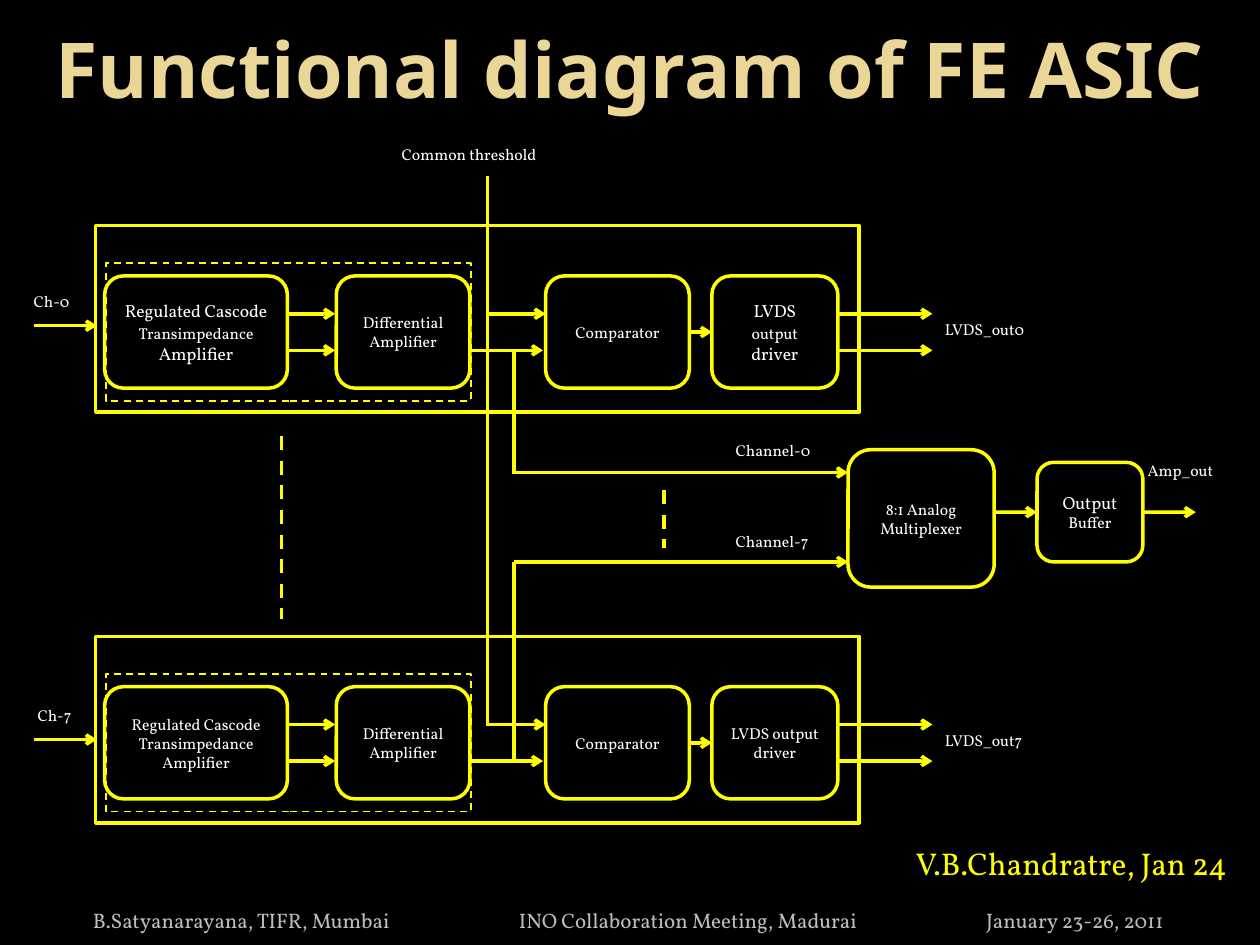
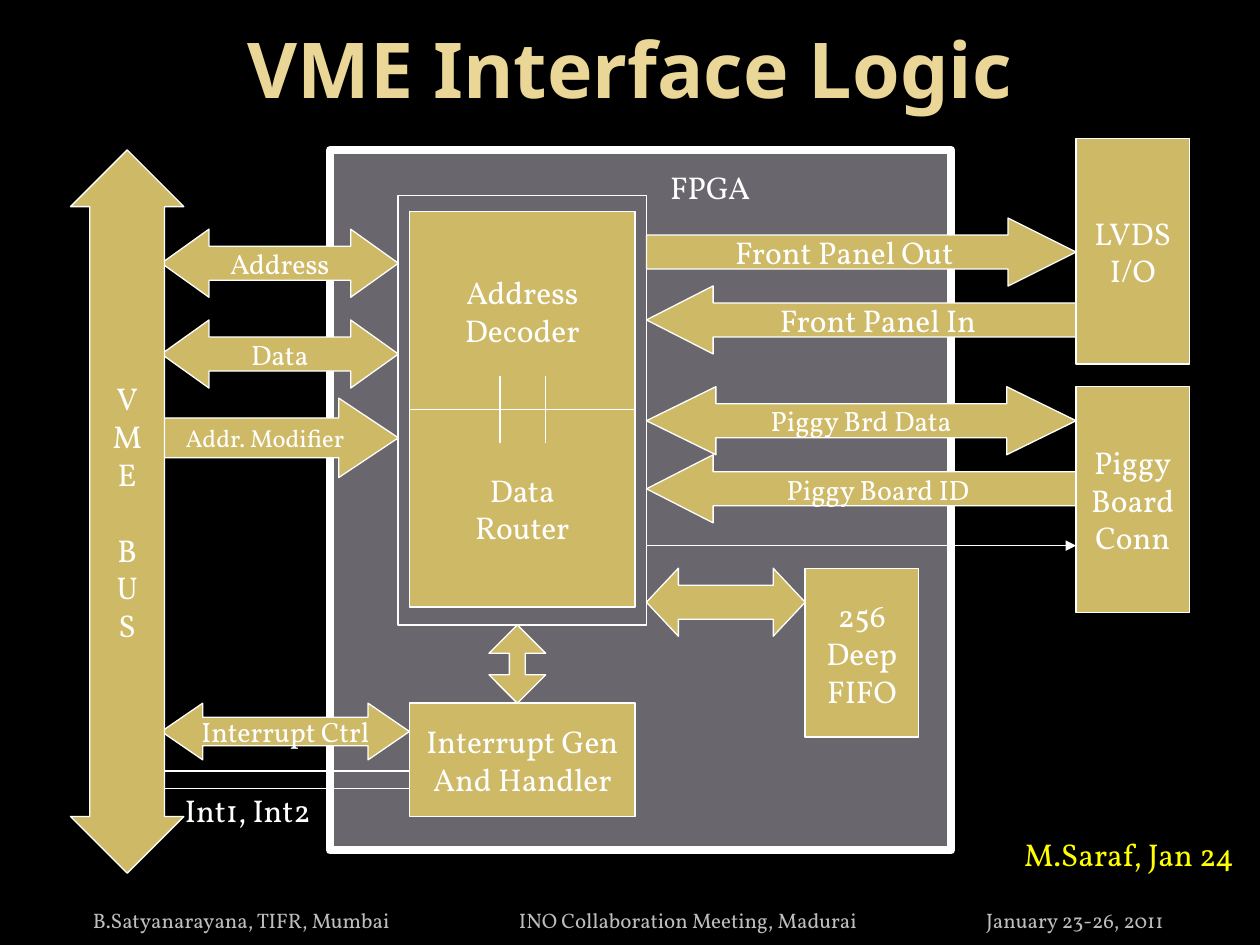
from dataclasses import dataclass
from itertools import cycle

from lxml import etree
from pptx import Presentation
from pptx.dml.color import RGBColor
from pptx.enum import dml, shapes, text
from pptx.oxml import ns
from pptx.util import Pt

COLORS = {
    "black": "000000", "title": "EAD696", "footer": "BDBDBD", "white": "FFFFFF",
    "yellow": "FFFF00", "gold": "CEB966", "gray": "69676D",
}
TITLE_FONT, BODY_FONT = "Noto Sans", "Vollkorn"
KIND = shapes.MSO_SHAPE
ALIGN = text.PP_ALIGN
ANCHOR = text.MSO_ANCHOR
RECT, ROUND = KIND.RECTANGLE, KIND.ROUNDED_RECTANGLE
BOTH, RIGHT, LEFT, UP_DOWN = (
    KIND.LEFT_RIGHT_ARROW, KIND.RIGHT_ARROW, KIND.LEFT_ARROW, KIND.UP_DOWN_ARROW)


@dataclass
class Style:
    line: str
    weight: float
    fill: str = ""
    dashed: bool = False
    wrap: bool = True


@dataclass
class Block:
    kind: int
    left: float
    top: float
    width: float
    height: float
    text: str = ""
    sizes: tuple = (9,)
    adjustments: tuple = ()


@dataclass
class Label:
    text: str
    left: float
    top: float
    width: float
    height: float = 19.4
    size: float = 9
    color: str = "white"
    font: str = BODY_FONT
    bold: bool = False
    align: int = ALIGN.LEFT
    anchor: int = ANCHOR.TOP
    inset: float = 7.2


@dataclass
class Line:
    x1: float
    y1: float
    x2: float
    y2: float
    head: str = ""


@dataclass
class Channel:
    number: int
    top: float
    cascode: tuple
    driver: tuple
    input_y: float
    label_left: float
    label_top: float


OUTLINE = Style("yellow", 2)
DASHED = Style("yellow", 2, dashed=True)
THIN_DASHED = Style("yellow", 1, dashed=True)
PANEL = Style("white", 4.5, "gray")
GOLD = Style("white", 0.75, "gold", wrap=False)
HAIRLINE = Style("white", 0.75)

CHANNELS = (
    Channel(0, 128.9, ("Regulated Cascode |Transimpedance| Amplifier", (10, 9, 10)),
            ("LVDS |output| driver", (10, 9, 10)), 186.1, 12.2, 163.4),
    Channel(7, 363.6, ("Regulated Cascode Transimpedance Amplifier", (9,)),
            ("LVDS output driver", (9,)), 422.6, 14.4, 399.6),
)


def rgb(name: str) -> RGBColor:
    return RGBColor.from_string(COLORS[name])


def format_runs(paragraph, sizes: tuple, color: str, font: str, bold: bool = False) -> None:
    for run, size in zip(paragraph.runs, cycle(sizes)):
        run.font.size = Pt(size)
        run.font.name = font
        run.font.bold = bold
        run.font.color.rgb = rgb(color)


def style_line(line, style: Style) -> None:
    line.color.rgb = rgb(style.line)
    line.width = Pt(style.weight)
    if style.dashed:
        line.dash_style = dml.MSO_LINE.DASH


def draw_block(slide, block: Block, style: Style):
    shape = slide.shapes.add_shape(
        block.kind, Pt(block.left), Pt(block.top), Pt(block.width), Pt(block.height))
    shape.shadow.inherit = False
    for index, value in enumerate(block.adjustments):
        shape.adjustments[index] = value
    if style.fill:
        shape.fill.solid()
        shape.fill.fore_color.rgb = rgb(style.fill)
    else:
        shape.fill.background()
    style_line(shape.line, style)
    if block.text:
        frame = shape.text_frame
        frame.word_wrap = style.wrap
        frame.vertical_anchor = ANCHOR.MIDDLE
        frame.text = block.text
        for paragraph in frame.paragraphs:
            first, *others = paragraph.text.split("|")
            paragraph.text = first
            for part in others:
                paragraph.add_run().text = part
            paragraph.alignment = ALIGN.CENTER
            format_runs(paragraph, block.sizes, "white", BODY_FONT)
    return shape


def draw_label(slide, label: Label) -> None:
    shape = slide.shapes.add_textbox(
        Pt(label.left), Pt(label.top), Pt(label.width), Pt(label.height))
    frame = shape.text_frame
    frame.word_wrap = True
    frame.vertical_anchor = label.anchor
    frame.margin_left = frame.margin_right = Pt(label.inset)
    frame.text = label.text
    paragraph = frame.paragraphs[0]
    paragraph.alignment = label.align
    format_runs(paragraph, (label.size,), label.color, label.font, label.bold)


def draw_line(slide, line: Line, style: Style, begin=None, end=None) -> None:
    connector = slide.shapes.add_connector(
        shapes.MSO_CONNECTOR.STRAIGHT, Pt(line.x1), Pt(line.y1), Pt(line.x2), Pt(line.y2))
    if begin is not None:
        connector.begin_connect(begin, 3)
    if end is not None:
        connector.end_connect(end, 1)
    style_line(connector.line, style)
    if line.head:
        outline = connector.line._get_or_add_ln()
        etree.SubElement(outline, ns.qn("a:tailEnd"), type=line.head)
    etree.SubElement(connector._element.spPr, ns.qn("a:effectLst"))


def new_slide(presentation, title: str, credit: Label):
    slide = presentation.slides.add_slide(presentation.slide_layouts[6])
    slide.background.fill.solid()
    slide.background.fill.fore_color.rgb = rgb("black")
    draw_label(slide, Label(title, 5.8, 3.6, 708.4, 70.6, 44, "title", TITLE_FONT,
                            True, ALIGN.CENTER, ANCHOR.MIDDLE))
    for words, left, width in (
        ("B.Satyanarayana, TIFR, Mumbai", 53, 190),
        ("INO Collaboration Meeting, Madurai", 296.5, 215),
        ("January 23-26, 2011", 563.5, 125),
    ):
        draw_label(slide, Label(words, left, 511.2, width, 25.2, 12, "footer",
                                anchor=ANCHOR.BOTTOM, inset=0))
    draw_label(slide, credit)
    return slide


def draw_channel(slide, channel: Channel) -> None:
    top = channel.top
    box_top, upper, lower = top + 28.8, top + 50.4, top + 71.3
    draw_block(slide, Block(RECT, 54.7, top, 436.3, 106.6), OUTLINE)
    draw_block(slide, Block(RECT, 60.5, top + 21.6, 208.8, 78.5), THIN_DASHED)
    stages = [
        draw_block(slide, Block(ROUND, left, box_top, width, 64.1, words, sizes), OUTLINE)
        for left, width, (words, sizes) in (
            (59.8, 104.4, channel.cascode),
            (192.2, 76.3, ("Differential Amplifier", (9,))),
            (311.8, 82.1, ("Comparator", (9,))),
            (406.8, 72, channel.driver),
        )
    ]
    for x1, x2, y in (
        (163.4, 191.5, upper), (163.4, 191.5, lower),
        (277.9, 311.8, upper), (267.8, 310.3, lower),
        (478.8, 532.8, upper), (478.8, 532.8, lower),
        (19.4, 55.4, channel.input_y),
    ):
        draw_line(slide, Line(x1, y, x2, y, "arrow"), OUTLINE)
    middle = box_top + 32
    draw_line(slide, Line(393.9, middle, 406.8, middle, "arrow"), OUTLINE,
              stages[2], stages[3])
    draw_label(slide, Label(f"LVDS_out{channel.number}", 532.8, upper, 69.1))
    draw_label(slide, Label(f"Ch-{channel.number}", channel.label_left,
                            channel.label_top, 38.9))


def build_functional_diagram(presentation) -> None:
    slide = new_slide(presentation, "Functional diagram of FE ASIC", Label(
        "V.B.Chandratre, Jan 24", 516.2, 478.8, 201.6, 28.8, 18, "yellow"))
    for channel in CHANNELS:
        draw_channel(slide, channel)
    multiplexer = Block(ROUND, 484.6, 257, 83.5, 78.5, "8:1 Analog Multiplexer")
    draw_block(slide, multiplexer, OUTLINE)
    output_buffer = draw_block(slide, Block(
        ROUND, 592.6, 264.2, 60.5, 56.9, "Output |Buffer", (10, 9)), OUTLINE)
    draw_line(slide, Line(568.1, 292.7, 592.6, 292.7, "arrow"), OUTLINE, end=output_buffer)
    draw_line(slide, Line(653.1, 292.7, 683.3, 292.7, "arrow"), OUTLINE, begin=output_buffer)
    for line in (
        Line(278.6, 414, 278.6, 100.8),
        Line(293.8, 200.2, 293.8, 270.7),
        Line(293.8, 270, 484.6, 270, "arrow"),
        Line(293.8, 321.1, 293.8, 434.9),
        Line(293.8, 321.1, 484.6, 321.1, "arrow"),
    ):
        draw_line(slide, line, OUTLINE)
    for line in (Line(161, 249.1, 161, 353.5), Line(379.4, 280.1, 379.4, 313.2)):
        draw_line(slide, line, DASHED)
    for label in (
        Label("Common threshold", 222.5, 79.2, 108),
        Label("Channel-0", 413.3, 248.4, 65.5),
        Label("Channel-7", 413.3, 300.2, 65.5),
        Label("Amp_out", 648.7, 259.9, 59),
    ):
        draw_label(slide, label)


def build_vme_interface(presentation) -> None:
    slide = new_slide(presentation, "VME Interface Logic", Label(
        "M.Saraf, Jan 24", 578.2, 473.8, 139, 28.8, 18, "yellow"))
    draw_block(slide, Block(RECT, 188.6, 85.7, 355, 400.3), PANEL)
    draw_block(slide, Block(RECT, 227.5, 111.6, 141.8, 245.5), HAIRLINE)
    for y in (440.6, 450.7):
        draw_line(slide, Line(234, y, 85.7, y, "triangle"), HAIRLINE)
    draw_line(slide, Line(369.4, 311.8, 614.9, 311.8, "triangle"), HAIRLINE)
    for block in (
        Block(BOTH, 92.2, 131, 135.4, 38.9, "Address", (16,), (0.5, 0.7)),
        Block(BOTH, 92.2, 182.9, 135.4, 38.9, "Data", (16,), (0.5, 0.7)),
        Block(RIGHT, 92.2, 227.5, 135.4, 45.4, "Addr. Modifier", (14,), (0.5, 0.75)),
        Block(RECT, 234, 121, 128.9, 113, "Address\nDecoder", (18,)),
        Block(RECT, 234, 234, 128.9, 113, "Data\nRouter", (18,)),
        Block(RIGHT, 369.4, 124.6, 245.5, 38.9, "Front Panel Out", (18,), (0.5, 1)),
        Block(LEFT, 369.4, 163.4, 245.5, 38.9, "Front Panel In", (18,), (0.5, 0.98)),
        Block(BOTH, 369.4, 221, 245.5, 38.9, "Piggy Brd Data", (16,), (0.5, 1.02)),
        Block(LEFT, 369.4, 259.9, 245.5, 38.9, "Piggy Board ID", (16,), (0.5, 0.98)),
        Block(RECT, 614.9, 79.2, 64.8, 128.9, "LVDS\nI/O", (18,)),
        Block(RECT, 614.9, 221, 64.8, 128.9, "Piggy\nBoard\nConn", (18,)),
        Block(RECT, 234, 401.8, 128.9, 64.8, "Interrupt Gen\nAnd Handler", (18,)),
        Block(UP_DOWN, 279.4, 357.1, 32.4, 44.7, adjustments=(0.5, 0.28)),
        Block(RECT, 460.1, 324.7, 64.8, 96.5, "256\nDeep\nFIFO", (18,)),
        Block(BOTH, 369.4, 324.7, 90.7, 38.9, adjustments=(0.5, 0.47)),
        Block(BOTH, 92.2, 401.8, 141.8, 32.4, "Interrupt Ctrl", (16,), (0.5, 0.73)),
    ):
        draw_block(slide, block, GOLD)
    bus = draw_block(slide, Block(UP_DOWN, 40.3, 85.7, 64.8, 413.3,
                                  "V\nM\nE\nB\nU\nS", (18,), (0.47, 0.66)), GOLD)
    bus.text_frame.paragraphs[3].space_before = Pt(21.7)
    for x in (285.8, 311.8):
        draw_line(slide, Line(x, 214.6, x, 253.4), HAIRLINE)
    draw_label(slide, Label("FPGA", 375.8, 92.2, 68.4, 31, 18))
    draw_label(slide, Label("Int1, Int2", 98.6, 448.6, 90.7, 31, 18))


def main() -> None:
    presentation = Presentation()
    presentation.slide_width, presentation.slide_height = Pt(720), Pt(540)
    build_functional_diagram(presentation)
    build_vme_interface(presentation)
    presentation.save("out.pptx")


if __name__ == "__main__":
    main()
